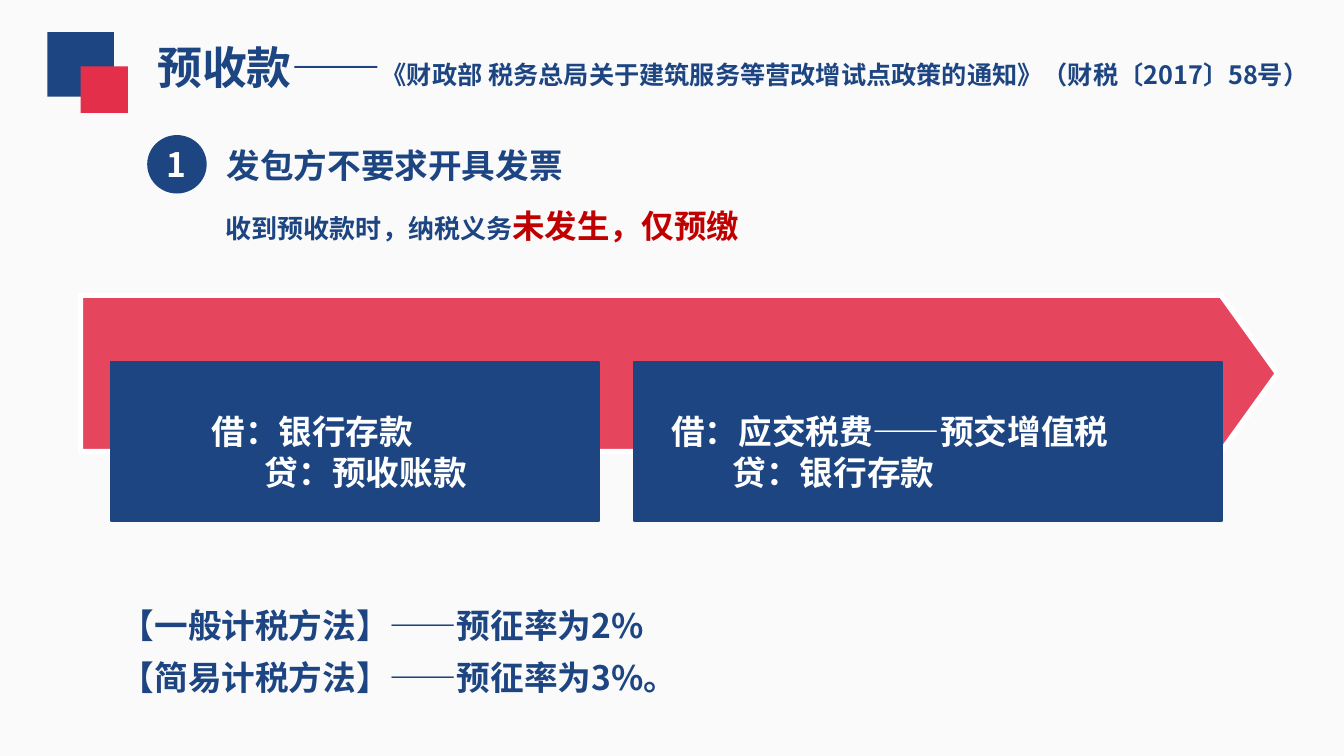
import pptx
import pptx.dml.color
import pptx.enum.shapes
import pptx.enum.text
import pptx.oxml.ns
import pptx.util
from lxml import etree

Inches = pptx.util.Inches
Pt = pptx.util.Pt
RGB = pptx.dml.color.RGBColor.from_string
Shape = pptx.enum.shapes.MSO_SHAPE
Align = pptx.enum.text.PP_ALIGN
Anchor = pptx.enum.text.MSO_ANCHOR
qn = pptx.oxml.ns.qn

FONT = "Noto Sans CJK SC"
COLORS = {"navy": "1D4582", "red": "E42F4B", "dark red": "C00000",
          "white": "FFFFFF", "background": "FAFAFA"}


def set_font(font, size, color):
    """Apply the bold slide font to Latin and East Asian text alike."""
    font.size = Pt(size)
    font.bold = True
    font.color.rgb = RGB(COLORS[color])
    font.name = FONT
    latin = font._element.find(qn("a:latin"))
    east_asian = etree.Element(qn("a:ea"), typeface=FONT)
    latin.addnext(east_asian)


def add_block(kind, left, top, width, height, fill, line=None, line_width=0):
    block = page.shapes.add_shape(kind, Inches(left), Inches(top),
                                  Inches(width), Inches(height))
    block.shadow.inherit = False
    block.fill.solid()
    block.fill.fore_color.rgb = RGB(COLORS[fill])
    if line:
        block.line.color.rgb = RGB(COLORS[line])
        block.line.width = Pt(line_width)
    else:
        block.line.fill.background()
    return block


deck = pptx.Presentation()
deck.slide_width = Inches(13.33)
deck.slide_height = Inches(7.5)
page = deck.slides.add_slide(deck.slide_layouts[5])
page.background.fill.solid()
page.background.fill.fore_color.rgb = RGB(COLORS["background"])

# Arrow band with the two entry panels
arrow = add_block(Shape.PENTAGON, 0.8, 2.93, 11.87, 1.55, "red", "white", 3.75)
arrow.adjustments[0] = 0.36
arrow_color = arrow.fill._xPr.find(qn("a:solidFill"))[0]
etree.SubElement(arrow_color, qn("a:alpha"), val="89000")
for left, width in [(1.1, 4.84), (6.29, 5.83)]:
    add_block(Shape.RECTANGLE, left, 3.59, width, 1.58, "navy", "navy", 1.5)

# Title with its corner ornament
add_block(Shape.RECTANGLE, 0.47, 0.32, 0.66, 0.64, "navy")
add_block(Shape.RECTANGLE, 0.8, 0.66, 0.47, 0.46, "red")
title = page.shapes.title
title.left, title.top = Inches(1.46), Inches(0.34)
title.width, title.height = Inches(11.87), Inches(1.18)
title.text_frame.vertical_anchor = Anchor.TOP
title.text_frame.auto_size = pptx.enum.text.MSO_AUTO_SIZE.NONE
title_para = title.text_frame.paragraphs[0]
title_para.alignment = Align.LEFT

# Numbered heading
badge = add_block(Shape.OVAL, 1.46, 1.34, 0.59, 0.58, "navy")
badge.text_frame.vertical_anchor = Anchor.MIDDLE
badge_para = badge.text_frame.paragraphs[0]
badge_para.text = "1"
badge_para.alignment = Align.CENTER
set_font(badge_para.font, 24, "white")

# Text boxes: position, colour, line spacing, indent of the second line, lines
text_boxes = [
    ((2.15, 1.39, 6.37, 0.5), "navy", 1, 0, ["发包方不要求开具发票"]),
    ((1.1, 5.83, 7.43, 1.2), "navy", 1.3, 0,
     ["【一般计税方法】——预征率为2%", "【简易计税方法】——预征率为3%。"]),
    ((2, 4.03, 3.94, 0.91), "white", 1, 0.53, ["借：银行存款", "贷：预收账款"]),
    ((6.56, 4.03, 5.56, 0.91), "white", 1, 0.61,
     ["借：应交税费——预交增值税", "贷：银行存款"]),
]
for position, color, spacing, indent, lines in text_boxes:
    box = page.shapes.add_textbox(*map(Inches, position))
    box.text_frame.word_wrap = True
    box.text_frame.text = "\n".join(lines)
    for number, para in enumerate(box.text_frame.paragraphs):
        para.line_spacing = spacing
        set_font(para.font, 24, color)
        if number and indent:
            para._p.get_or_add_pPr().set("marL", str(Inches(indent)))

# Lines that mix sizes or colours
note = page.shapes.add_textbox(Inches(2.11), Inches(1.98), Inches(10.83), Inches(0.54))
note.text_frame.word_wrap = True
note.text_frame.margin_left = note.text_frame.margin_right = Inches(0.13)
note.text_frame.margin_top = note.text_frame.margin_bottom = Inches(0.06)
mixed_lines = [
    (title_para, [
        ("预收款——", 32, "navy"),
        ("《财政部 税务总局关于建筑服务等营改增试点政策的通知》（财税〔2017〕58号）", 18, "navy")]),
    (note.text_frame.paragraphs[0], [
        ("收到预收款时，纳税义务", 18.6, "navy"),
        ("未发生，仅预缴", 23.2, "dark red")]),
]
for para, spans in mixed_lines:
    for text, size, color in spans:
        span = para.add_run()
        span.text = text
        set_font(span.font, size, color)

deck.save("out.pptx")
